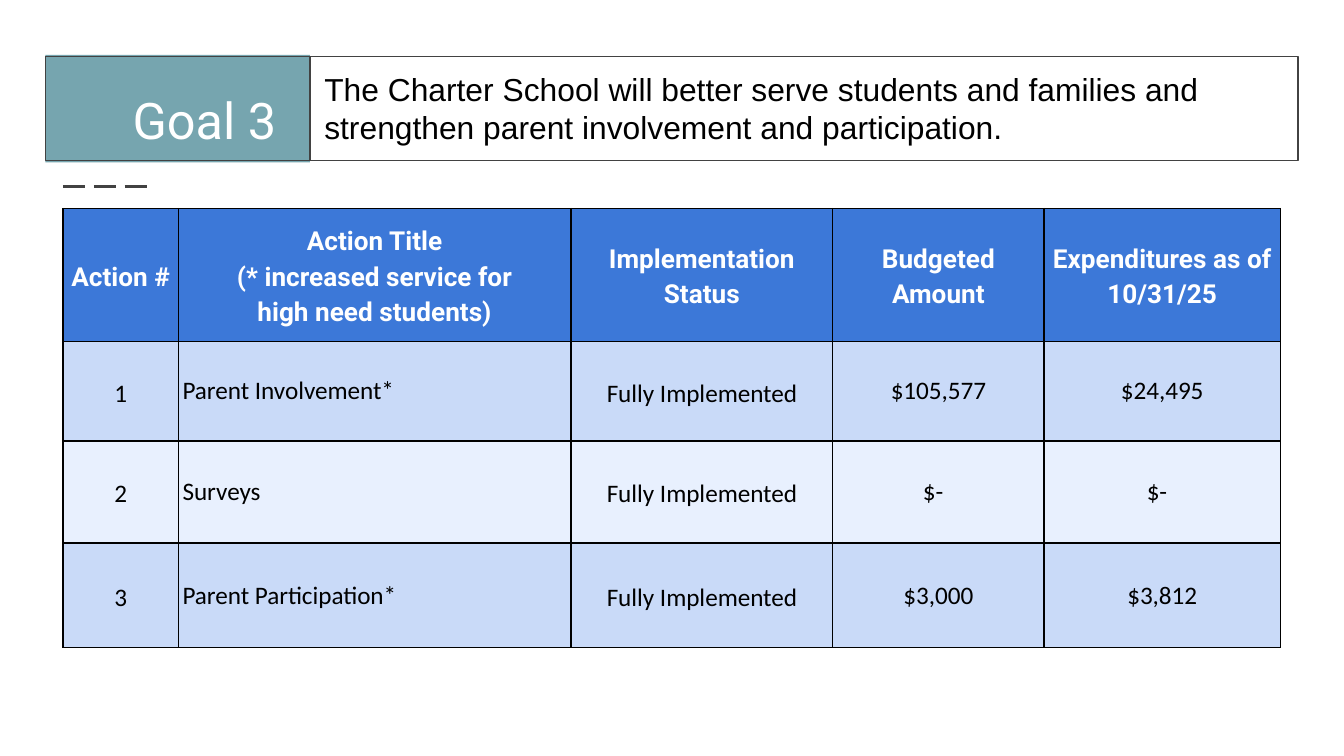
from lxml import etree
from pptx import Presentation
from pptx import util as u
from pptx.dml.color import RGBColor
from pptx.enum import dml, shapes, text
from pptx.oxml.ns import qn

COLORS = {"ink": "424242", "teal": "76A5AF", "header": "3C78D8", "odd": "C9DAF8",
          "even": "E8F0FE", "white": "FFFFFF", "black": "000000"}
GOAL = "Goal 3"
DESCRIPTION = ("The Charter School will better serve students and families and "
               "strengthen parent involvement and participation.")
ACTIONS = [
    ("Action #", "Action Title\n(* increased service for\nhigh need students)",
     "Implementation Status", "Budgeted Amount", "Expenditures as of 10/31/25"),
    ("1", "Parent Involvement*", "Fully Implemented", "$105,577", "$24,495"),
    ("2", "Surveys", "Fully Implemented", "$-", "$-"),
    ("3", "Parent Participation*", "Fully Implemented", "$3,000", "$3,812"),
]
COLUMN_WIDTHS = [2.18, 7.42, 4.95, 3.99, 4.47]
ROW_HEIGHTS = [2.41, 1.88, 1.93, 1.98]
TITLE_COLUMN, SPACED_COLUMNS = 1, (0, 2)
BANNER_LEFT, BANNER_TOP, BANNER_HEIGHT = 0.86, 1.07, 1.96
GOAL_WIDTH, DESCRIPTION_WIDTH = 5.0, 18.67
TABLE_LEFT, TABLE_TOP = 1.19, 3.94


def rgb(name):
    return RGBColor.from_string(COLORS[name])


def set_margins(part, left, top, right, bottom):
    part.margin_left, part.margin_top = u.Cm(left), u.Cm(top)
    part.margin_right, part.margin_bottom = u.Cm(right), u.Cm(bottom)


def style_runs(paragraph, font, size, color, bold=False):
    for run in paragraph.runs:
        run.font.name, run.font.size, run.font.bold = font, u.Pt(size), bold
        run.font.color.rgb = rgb(color)


def add_panel(slide, left, top, width, height, fill=None, line=None):
    panel = slide.shapes.add_shape(shapes.MSO_SHAPE.RECTANGLE,
                                   u.Cm(left), u.Cm(top), u.Cm(width), u.Cm(height))
    panel.shadow.inherit = False
    if fill:
        panel.fill.solid()
        panel.fill.fore_color.rgb = rgb(fill)
    else:
        panel.fill.background()
    if line:
        panel.line.color.rgb, panel.line.width = rgb(line), u.Pt(0.75)
    else:
        panel.line.fill.background()
    return panel


def write_panel(panel, words, font, size, color, align, anchor, right=0.25):
    frame = panel.text_frame
    frame.text, frame.word_wrap, frame.vertical_anchor = words, True, anchor
    set_margins(frame, 0.27, 0.25, right, 0.25)
    frame.paragraphs[0].alignment = align
    style_runs(frame.paragraphs[0], font, size, color)


def border_cell(cell):
    properties = cell._tc.get_or_add_tcPr()
    for position, side in enumerate(("a:lnL", "a:lnR", "a:lnT", "a:lnB")):
        edge = etree.Element(qn(side), w=str(u.Pt(0.75)))
        fill = etree.SubElement(edge, qn("a:solidFill"))
        etree.SubElement(fill, qn("a:srgbClr"), val=COLORS["black"])
        properties.insert(position, edge)


def fill_cell(cell, words, row, column):
    header = row == 0
    cell.text = words
    cell.vertical_anchor = text.MSO_ANCHOR.MIDDLE
    padding = 0.25 if header else 0.13
    set_margins(cell, 0.08, padding, 0.28 if words == "$-" else 0.08, padding)
    for paragraph in cell.text_frame.paragraphs:
        left_aligned = column == TITLE_COLUMN and not header
        paragraph.alignment = text.PP_ALIGN.LEFT if left_aligned else text.PP_ALIGN.CENTER
        if header or column in SPACED_COLUMNS:
            paragraph.line_spacing = 1.15
        if header:
            style_runs(paragraph, "Roboto", 14, "white", True)
        else:
            style_runs(paragraph, "Calibri", 13.5, "black")
    cell.fill.solid()
    cell.fill.fore_color.rgb = rgb("header" if header else "odd" if row % 2 else "even")
    border_cell(cell)


def main():
    deck = Presentation()
    deck.slide_width, deck.slide_height = u.Cm(25.4), u.Cm(14.29)
    slide = deck.slides.add_slide(deck.slide_layouts[6])

    divider = slide.shapes.add_connector(shapes.MSO_CONNECTOR.STRAIGHT,
                                         u.Cm(1.19), u.Cm(3.53), u.Cm(2.9), u.Cm(3.53))
    divider.line.color.rgb, divider.line.width = rgb("ink"), u.Pt(1.5)
    divider.line.dash_style = dml.MSO_LINE.LONG_DASH
    etree.SubElement(divider._element.spPr, qn("a:effectLst"))

    goal = add_panel(slide, BANNER_LEFT, 1.04, GOAL_WIDTH, 2.03, fill="teal")
    write_panel(goal, GOAL, "Roboto", 27, "white", text.PP_ALIGN.RIGHT,
                text.MSO_ANCHOR.BOTTOM, right=0.64)
    description = add_panel(slide, BANNER_LEFT + GOAL_WIDTH, BANNER_TOP,
                            DESCRIPTION_WIDTH, BANNER_HEIGHT, "white", "ink")
    write_panel(description, DESCRIPTION, "Arial", 17, "black", text.PP_ALIGN.LEFT,
                text.MSO_ANCHOR.TOP)
    add_panel(slide, BANNER_LEFT, BANNER_TOP, GOAL_WIDTH, BANNER_HEIGHT, line="ink")

    actions = slide.shapes.add_table(
        len(ROW_HEIGHTS), len(COLUMN_WIDTHS), u.Cm(TABLE_LEFT), u.Cm(TABLE_TOP),
        u.Cm(sum(COLUMN_WIDTHS)), u.Cm(sum(ROW_HEIGHTS))).table
    for column, width in zip(actions.columns, COLUMN_WIDTHS):
        column.width = u.Cm(width)
    for row, (height, action) in enumerate(zip(ROW_HEIGHTS, ACTIONS)):
        actions.rows[row].height = u.Cm(height)
        for column, words in enumerate(action):
            fill_cell(actions.cell(row, column), words, row, column)

    deck.save("out.pptx")


if __name__ == "__main__":
    main()
